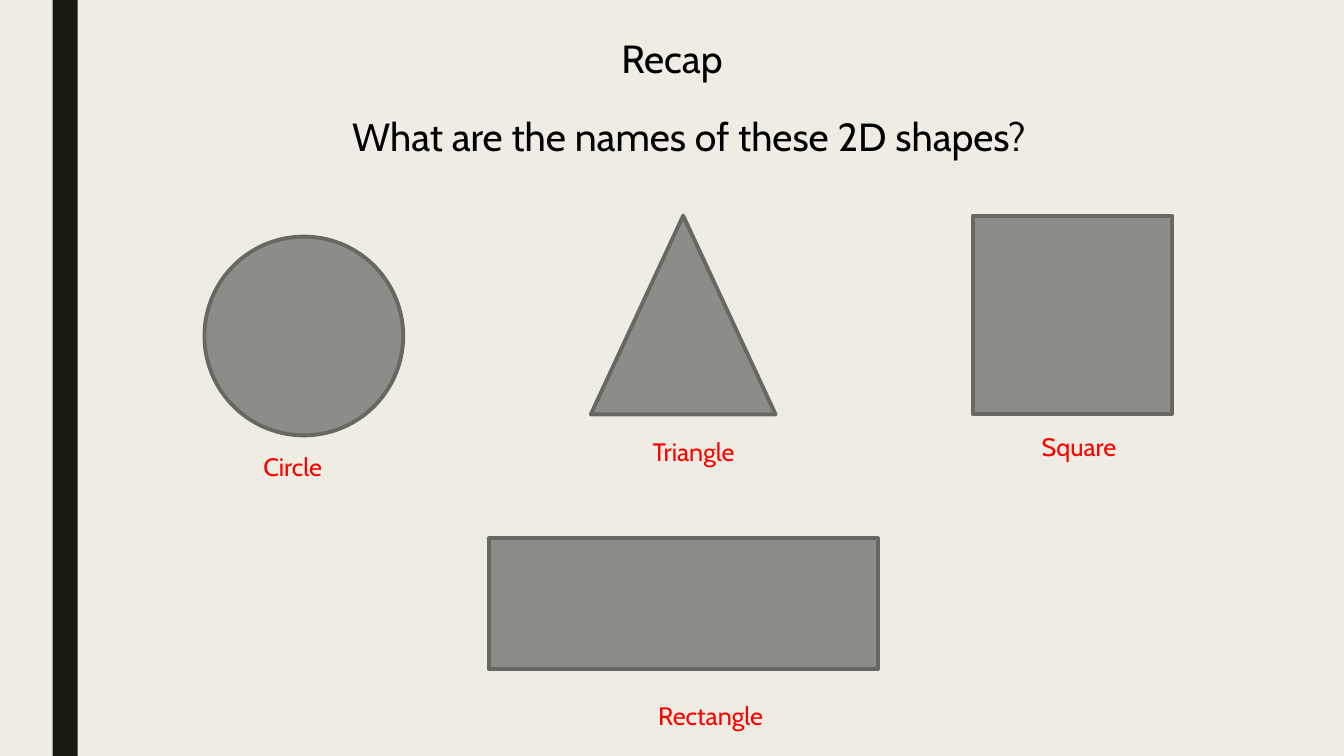
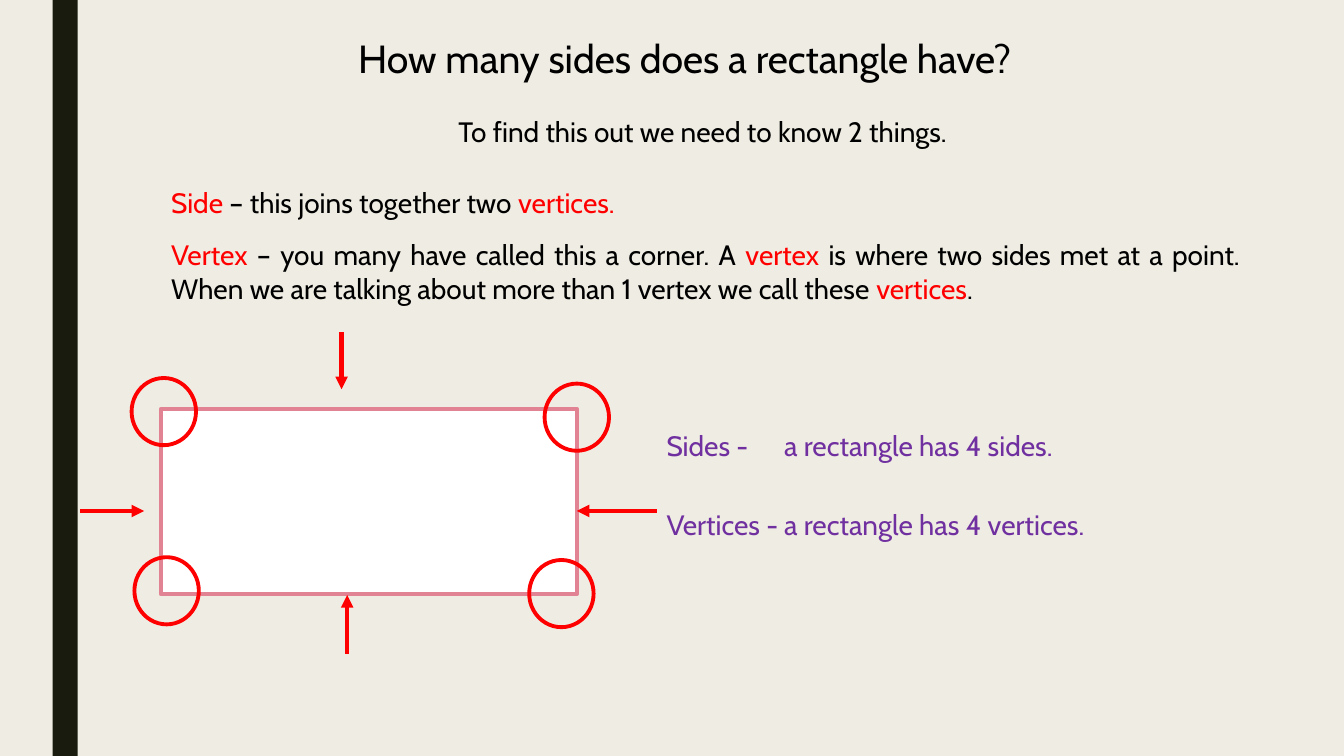
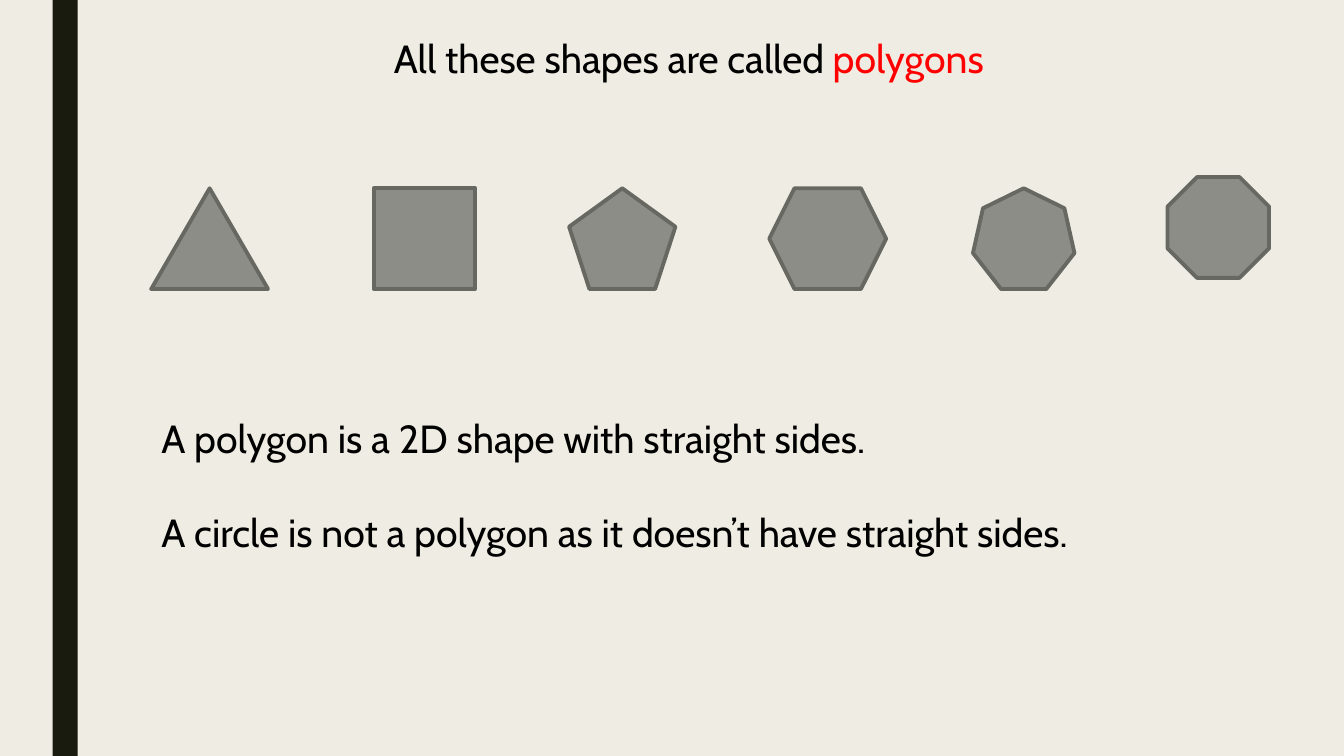
from dataclasses import dataclass

from lxml.etree import SubElement
from pptx import Presentation
from pptx.dml.color import RGBColor
from pptx.enum.shapes import MSO_CONNECTOR as LINE, MSO_SHAPE as SHAPE
from pptx.enum.text import MSO_ANCHOR as ANCHOR, MSO_AUTO_SIZE as FIT, PP_ALIGN as ALIGN
from pptx.oxml.ns import qn
from pptx.util import Pt

COLOURS = {
    "paper": "EFEDE3",
    "band": "191B0E",
    "ink": "000000",
    "key": "FF0000",
    "answer": "7030A0",
    "figure": "8C8D86",
    "edge": "686863",
    "white": "FFFFFF",
    "pink": "E28394",
}
FONTS = {
    "large": {"name": "Cabin", "size": Pt(28)},
    "medium": {"name": "Cabin", "size": Pt(20)},
    "label": {"name": "Cabin", "size": Pt(18)},
}
FRAME = {"word_wrap": True, "auto_size": FIT.NONE, "vertical_anchor": ANCHOR.TOP}


@dataclass
class Box:
    """A rectangle in points."""

    left: float
    top: float
    width: float = 0
    height: float = 0

    def inner(self, left, top, width=0, height=0):
        """Return a box placed relative to this one."""
        return Box(self.left + left, self.top + top, width, height)

    def lengths(self):
        """Return left, top, width and height as lengths."""
        return [Pt(value) for value in (self.left, self.top, self.width, self.height)]


def colour(name):
    """Return a named colour."""
    return RGBColor.from_string(COLOURS[name])


def set_all(target, values):
    """Set each attribute in a dict of format values."""
    for name, value in values.items():
        setattr(target, name, value)


def write(frame, paragraphs, font="large", align=ALIGN.LEFT, gap=0):
    """Fill a text frame with paragraphs, each a list of (text, colour) runs."""
    set_all(frame, FRAME)
    for index, runs in enumerate(paragraphs):
        para = frame.add_paragraph() if index else frame.paragraphs[0]
        properties = para._p.get_or_add_pPr()
        properties.set("marL", "0")
        properties.set("indent", "0")
        SubElement(properties, qn("a:buNone"))
        set_all(para, {"alignment": align, "space_before": Pt(gap if index else 0)})
        for text, ink in runs:
            span = para.add_run()
            span.text = text
            set_all(span.font, FONTS[font])
            span.font.color.rgb = colour(ink)


def add_text(page, box, text, ink="ink", font="large", align=ALIGN.LEFT):
    """Add a text box holding one line."""
    write(page.shapes.add_textbox(*box.lengths()).text_frame, [[(text, ink)]], font, align)


def fill_placeholder(holder, box, paragraphs, **options):
    """Move a placeholder to a box and write in it."""
    names = ("left", "top", "width", "height")
    set_all(holder, dict(zip(names, box.lengths())))
    write(holder.text_frame, paragraphs, **options)


def add_figure(page, kind, box, fill="figure", edge="edge"):
    """Add a preset shape; a fill or edge of None is left out."""
    figure = page.shapes.add_shape(kind, *box.lengths())
    figure.shadow.inherit = False
    if fill:
        figure.fill.solid()
        figure.fill.fore_color.rgb = colour(fill)
    else:
        figure.fill.background()
    if edge:
        figure.line.color.rgb = colour(edge)
        figure.line.width = Pt(2.75)
    else:
        figure.line.fill.background()
    return figure


def add_arrow(page, start, end):
    """Add a red arrow between two points."""
    ends = [Pt(value) for point in (start, end) for value in (point.left, point.top)]
    arrow = page.shapes.add_connector(LINE.STRAIGHT, *ends)
    arrow.line.color.rgb = colour("key")
    arrow.line.width = Pt(3)
    SubElement(arrow.line._get_or_add_ln(), qn("a:tailEnd"), type="triangle")
    SubElement(arrow._element.spPr, qn("a:effectLst"))


def add_page(deck, layout, box, title):
    """Add a slide with its title."""
    page = deck.slides.add_slide(deck.slide_layouts[layout])
    fill_placeholder(page.shapes.title, box, [title], align=ALIGN.CENTER)
    return page


def dress_master(deck, page):
    """Give the master its background and side band."""
    master = deck.slide_master
    master.background.fill.solid()
    master.background.fill.fore_color.rgb = colour("paper")
    band = add_figure(page, SHAPE.RECTANGLE, Box(37.5, 0, 18, 540), "band", None)
    master.shapes.element.insert(2, band._element)


def figure_gallery(page, box, figures):
    """Place figures given as kind and offsets within a box."""
    for kind, *offsets in figures:
        add_figure(page, kind, box.inner(*offsets))


def label_gallery(page, box, labels):
    """Place the red figure names within a box."""
    for text, left, top in labels:
        add_text(page, box.inner(left, top, 110, 29), text, "key", "label")


def rectangle_diagram(page, box):
    """Draw a rectangle with circled vertices and an arrow to each side."""
    add_figure(page, SHAPE.RECTANGLE, box, "white", "pink")
    for left, top in [(-21, -22), (274, -18), (-19, 106), (263, 108)]:
        add_figure(page, SHAPE.OVAL, box.inner(left, top, 46, 48), None, "key")
    for start, end in [
        ((129, -55), (129, -14)),
        ((-58, 73), (-12, 73)),
        ((133, 175), (133, 133)),
        ((354, 73), (297, 73)),
    ]:
        add_arrow(page, box.inner(*start), box.inner(*end))


def answer_rows(page, box, answers):
    """Write term and answer pairs in two columns."""
    for row, (term, answer) in enumerate(answers):
        top = row * 56.5
        add_text(page, box.inner(0, top, 99, 32), term, "answer", "medium")
        add_text(page, box.inner(84, top, box.width - 84, 32), answer, "answer", "medium")


def recap_slide(deck):
    """Build the slide that names four 2D shapes."""
    page = add_page(deck, 5, Box(345, 21, 270, 41), [("Recap", "ink")])
    dress_master(deck, page)
    question = "What are the names of these 2D shapes?"
    add_text(page, Box(40, 77, 904, 41), question, align=ALIGN.CENTER)
    gallery = Box(146, 154, 691, 372)
    figure_gallery(page, gallery, [
        (SHAPE.OVAL, 0, 15, 142, 142),
        (SHAPE.ISOSCELES_TRIANGLE, 276, 0, 132, 142),
        (SHAPE.RECTANGLE, 549, 0, 142, 142),
        (SHAPE.RECTANGLE, 203, 230.5, 278, 93.5),
    ])
    label_gallery(page, gallery, [
        ("Circle", 35, 165),
        ("Triangle", 313, 154),
        ("Square", 591, 150.5),
        ("Rectangle", 317, 343),
    ])


def sides_slide(deck):
    """Build the slide on sides and vertices of a rectangle."""
    title = [("How many sides does a rectangle have?", "ink")]
    page = add_page(deck, 1, Box(100, 21, 778, 41), title)
    hint = "To find this out we need to know 2 things."
    add_text(page, Box(113, 78.5, 778, 32), hint, font="medium", align=ALIGN.CENTER)
    definitions = [
        [("Side", "key"), (" – this joins together two ", "ink"), ("vertices.", "key")],
        [
            ("Vertex", "key"),
            (" – you many have called this a corner. A ", "ink"),
            ("vertex", "key"),
            (" is where two sides met at a point. When we are talking about "
             "more than 1 vertex we call these ", "ink"),
            ("vertices", "key"),
            (".", "ink"),
        ],
    ]
    fill_placeholder(page.placeholders[1], Box(115, 129, 778, 93), definitions,
                     font="medium", align=ALIGN.JUSTIFY, gap=13)
    rectangle_diagram(page, Box(115, 292, 297, 132.5))
    answer_rows(page, Box(469, 302.5, 491, 88), [
        ("Sides -", "a rectangle has 4 sides."),
        ("Vertices -", "a rectangle has 4 vertices."),
    ])


def polygons_slide(deck):
    """Build the slide that defines polygons."""
    title = [("All these shapes are called ", "ink"), ("polygons", "key")]
    page = add_page(deck, 1, Box(103, 21, 778, 41), title)
    figure_gallery(page, Box(108, 134.5, 798, 72), [
        (SHAPE.ISOSCELES_TRIANGLE, 0, 0, 83.5, 72),
        (SHAPE.RECTANGLE, 159, 0, 72.5, 72),
        (SHAPE.REGULAR_PENTAGON, 298.5, 0, 76, 72),
        (SHAPE.HEXAGON, 441.5, 0, 83.5, 72),
        (SHAPE.HEPTAGON, 587, 0, 72.5, 72),
        (SHAPE.OCTAGON, 726, -8, 72.5, 72),
    ])
    facts = [
        [("A polygon is a 2D shape with straight sides.", "ink")],
        [("A circle is not a polygon as it doesn’t have straight sides.", "ink")],
    ]
    fill_placeholder(page.placeholders[1], Box(108, 292.5, 778, 109), facts,
                     align=ALIGN.JUSTIFY, gap=33)


def main():
    """Build and save the deck."""
    deck = Presentation()
    set_all(deck, {"slide_width": Pt(960), "slide_height": Pt(540)})
    for build in (recap_slide, sides_slide, polygons_slide):
        build(deck)
    deck.save("out.pptx")


if __name__ == "__main__":
    main()
